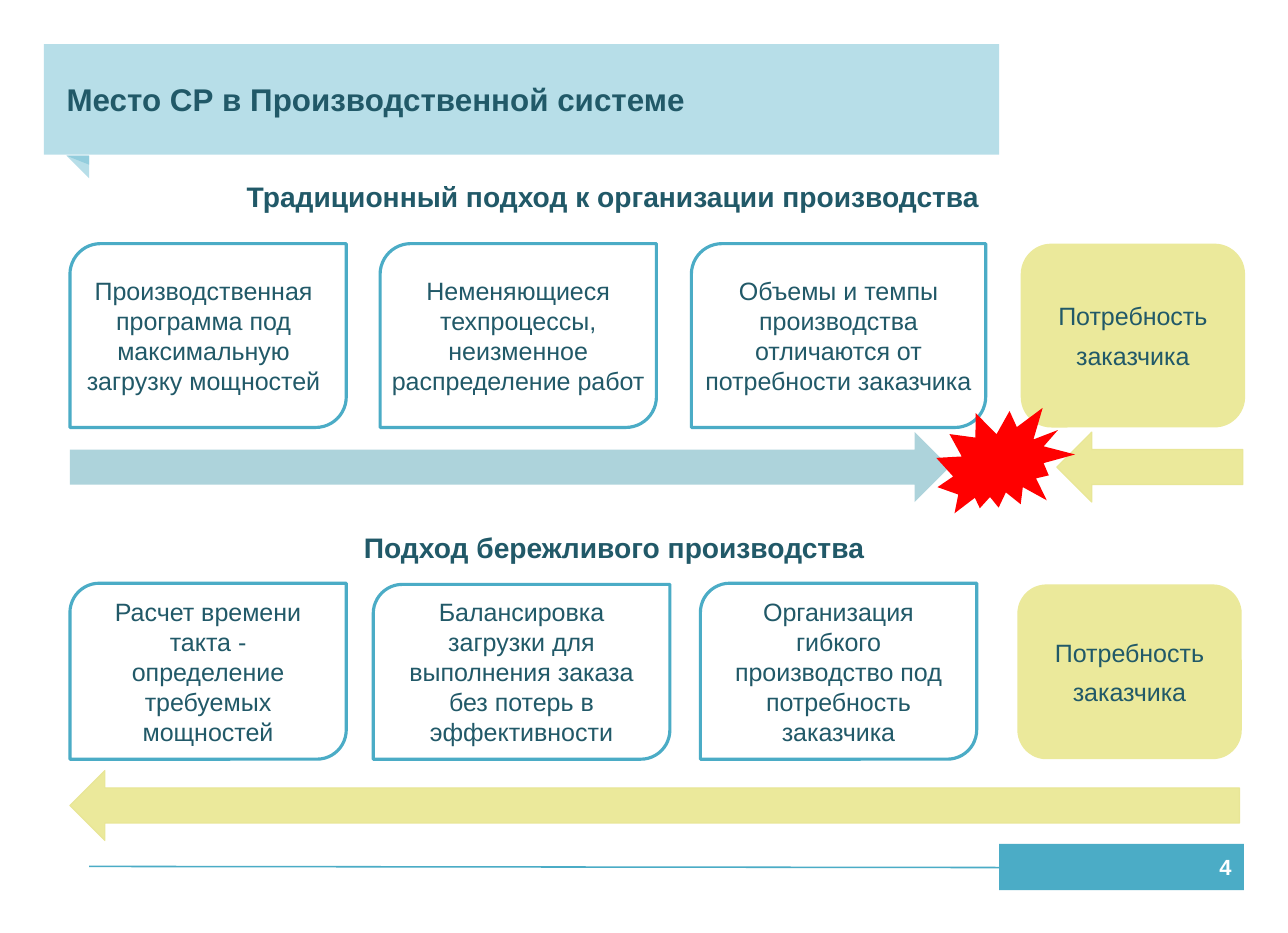
from pptx import Presentation
from pptx.dml.color import RGBColor
from pptx.enum import shapes, text
from pptx.oxml.ns import qn
from pptx.util import Inches, Pt

COLORS = {
    "pale": "B7DEE8", "fold": "93CDDD", "teal": "4BACC6", "dark": "215968",
    "white": "FFFFFF", "yellow": "EBE99B", "edge": "E8E696",
    "arrow": "ADD3DB", "red": "FF0000",
}
KIND = shapes.MSO_SHAPE
ALIGN = text.PP_ALIGN


def add_shape(kind, box, fill, line=None, width=1):
    sp = s.shapes.add_shape(kind, *map(Inches, box))
    sp.shadow.inherit = False
    sp.fill.solid()
    sp.fill.fore_color.rgb = RGBColor.from_string(COLORS[fill])
    if line:
        sp.line.color.rgb = RGBColor.from_string(COLORS[line])
        sp.line.width = Pt(width)
    else:
        sp.line.fill.background()
    return sp


def write(sp, lines, size, insets, align=ALIGN.CENTER, bold=False,
          color="dark", before=0, after=0, anchor=text.MSO_ANCHOR.MIDDLE):
    tf = sp.text_frame
    tf.word_wrap = True
    tf.vertical_anchor = anchor
    tf.margin_left, tf.margin_top, tf.margin_right, tf.margin_bottom = map(Inches, insets)
    tf.text = "\n".join(lines)
    for p in tf.paragraphs:
        p.alignment = align
        p.space_before, p.space_after = Pt(before), Pt(after)
        p.font.name, p.font.size, p.font.bold = "Arial", Pt(size), bold
        p.font.color.rgb = RGBColor.from_string(COLORS[color])


prs = Presentation()
prs.slide_width, prs.slide_height = Inches(11.42), Inches(8.27)
s = prs.slides.add_slide(prs.slide_layouts[6])

# Title banner with its folded corner
for height, fill in [(0.2, "pale"), (0.08, "fold")]:
    fold = add_shape(KIND.RIGHT_TRIANGLE, (0.59, 1.38, 0.2, height), fill)
    fold.rotation = 180
title = add_shape(KIND.RECTANGLE, (0.39, 0.39, 8.47, 0.98), "pale")
write(title, ["Место СР в Производственной системе"], 20, (0.2, 0, 0.1, 0),
      align=ALIGN.LEFT, bold=True)

# Footer rule and slide number
rule = s.shapes.add_connector(shapes.MSO_CONNECTOR.STRAIGHT, Inches(0.79), Inches(7.68),
                              Inches(8.86), Inches(7.69))
rule.line.color.rgb = RGBColor.from_string(COLORS["teal"])
rule.line.width = Pt(1)
rule._element.spPr.append(rule._element.spPr.makeelement(qn("a:effectLst"), {}))
number = add_shape(KIND.RECTANGLE, (8.86, 7.48, 2.17, 0.41), "teal")
write(number, ["4"], 14, (0.11, 0.06, 0.11, 0.06), align=ALIGN.RIGHT, bold=True, color="white")

# Section headings
for left, top, heading in [
    (0.62, 1.54, "Традиционный подход к организации производства"),
    (0.63, 4.65, "Подход бережливого производства"),
]:
    tb = s.shapes.add_textbox(Inches(left), Inches(top), Inches(9.63), Inches(0.42))
    write(tb, [heading], 18, (0.1, 0.05, 0.1, 0.05), bold=True, anchor=text.MSO_ANCHOR.TOP)

# Process steps: box, left and right inset, wording
steps = [
    ((0.62, 2.16, 2.45, 1.63), 0.04, 0.12,
     "Производственная программа под максимальную загрузку мощностей"),
    ((3.37, 2.16, 2.45, 1.63), 0, 0,
     "Неменяющиеся техпроцессы, неизменное распределение работ"),
    ((6.13, 2.16, 2.61, 1.63), 0, 0,
     "Объемы и темпы производства отличаются от потребности заказчика"),
    ((0.62, 5.17, 2.45, 1.56), 0.2, 0.2,
     "Расчет времени такта - определение требуемых мощностей"),
    ((3.31, 5.18, 2.63, 1.55), 0.2, 0.2,
     "Балансировка загрузки для выполнения заказа без потерь в эффективности"),
    ((6.21, 5.17, 2.45, 1.56), 0.2, 0.2,
     "Организация гибкого производство под потребность заказчика"),
]
for box, inset_left, inset_right, wording in steps:
    step = add_shape(KIND.ROUND_2_DIAG_RECTANGLE, box, "white", "teal", 2)
    write(step, [wording], 16, (inset_left, 0.04, inset_right, 0.04), before=6, after=6)

# Customer demand
for box in [(9.05, 2.16, 1.99, 1.63), (9.02, 5.18, 1.99, 1.55)]:
    demand = add_shape(KIND.ROUNDED_RECTANGLE, box, "yellow")
    write(demand, ["Потребность", "заказчика"], 16, (0, 0, 0, 0), after=6)

# Push and pull arrows, with the clash between them
add_shape(KIND.RIGHT_ARROW, (0.62, 3.83, 7.8, 0.62), "arrow")
for box in [(9.37, 3.83, 1.65, 0.62), (0.62, 6.83, 10.37, 0.62)]:
    add_shape(KIND.LEFT_ARROW, box, "yellow", "edge", 0.75)
clash = add_shape(KIND.EXPLOSION2, (8.31, 3.55, 1.19, 1.09), "red")
clash.rotation = 13.4

prs.save("out.pptx")
